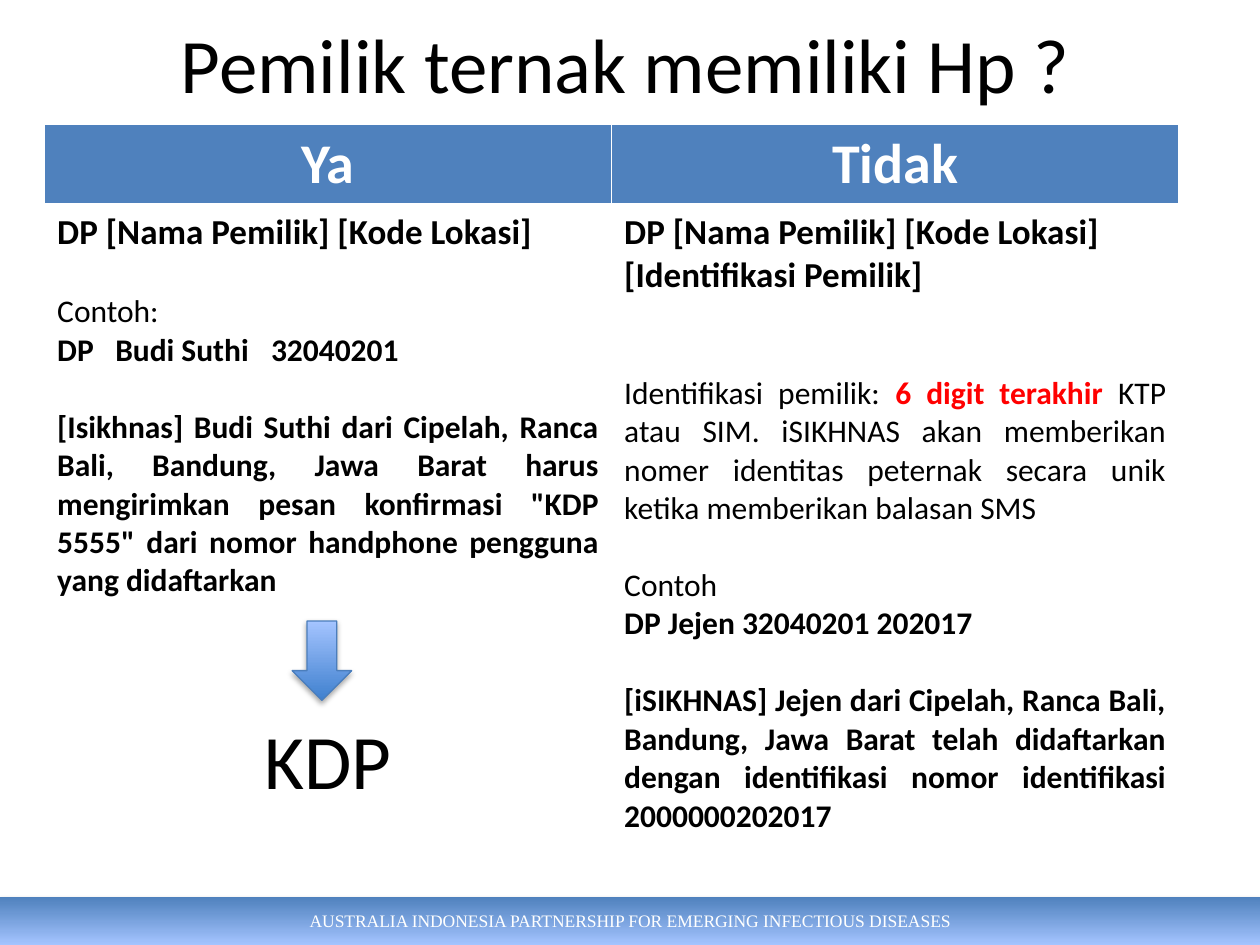
from lxml.etree import SubElement
from pptx import Presentation
from pptx.dml.color import RGBColor
from pptx.enum.shapes import MSO_SHAPE
from pptx.enum.text import MSO_ANCHOR, PP_ALIGN
from pptx.oxml.ns import qn
from pptx.util import Cm, Pt

# Content: a paragraph is (runs, format); a run is (text, format)
TITLE = "Pemilik ternak memiliki Hp ?"
FOOTER = "AUSTRALIA INDONESIA PARTNERSHIP FOR EMERGING INFECTIOUS DISEASES"
HEADERS = ["Ya", "Tidak"]

THEME = {
    "font": "Calibri", "footer_font": "Times New Roman",
    "blue": "4F81BD", "light": "A4C4FF", "arrow": "3F80CE", "outline": "4B7EBC",
    "white": "FFFFFF", "black": "000000", "red": "FF0000",
    "title": 44, "header": 32, "lead": 20, "body": 18, "footer": 10,
}
BOLD = {"bold": True}
LEAD = {"bold": True, "size": THEME["lead"]}
BIG = {"size": THEME["title"]}
ALERT = {"bold": True, "color": THEME["red"]}
LEFT, CENTER, JUSTIFY = PP_ALIGN.LEFT, PP_ALIGN.CENTER, PP_ALIGN.JUSTIFY
LINE = 22  # points in one body line, the unit of the gaps

YES = [
    ([("DP [Nama Pemilik] [Kode Lokasi]", LEAD)], {}),
    ([("Contoh:", {})], {"gap": 1}),
    ([("DP\tBudi Suthi\t32040201", BOLD)], {"tabs": [1.17, 4.31]}),
    ([("[Isikhnas] Budi Suthi dari Cipelah, Ranca Bali, Bandung, Jawa Barat "
       "harus mengirimkan pesan konfirmasi \"KDP 5555\" dari nomor handphone "
       "pengguna yang didaftarkan", BOLD)], {"gap": 1, "align": JUSTIFY}),
    ([("KDP", BIG)], {"gap": 3, "align": CENTER}),
]
NO = [
    ([("DP [Nama Pemilik] [Kode Lokasi] [Identifikasi Pemilik]", LEAD)], {}),
    ([("Identifikasi pemilik: ", {}), ("6 digit terakhir ", ALERT),
      ("KTP atau SIM. iSIKHNAS akan memberikan nomer identitas peternak secara "
       "unik ketika memberikan balasan SMS", {})], {"gap": 2, "align": JUSTIFY}),
    ([("Contoh", {})], {"gap": 1, "align": JUSTIFY}),
    ([("DP Jejen 32040201 202017", BOLD)], {"align": JUSTIFY}),
    ([("[iSIKHNAS] Jejen dari Cipelah, Ranca Bali, Bandung, Jawa Barat telah "
       "didaftarkan dengan identifikasi nomor identifikasi 2000000202017", BOLD)],
     {"gap": 1, "align": JUSTIFY}),
]


def rgb(value):
    return RGBColor.from_string(value)


def write(tf, paragraphs, **base):
    for i, (runs, fmt) in enumerate(paragraphs):
        p = tf.paragraphs[0] if i == 0 else tf.add_paragraph()
        p.alignment = fmt.get("align", LEFT)
        p.space_before = Pt(LINE * fmt.get("gap", 0))
        if "tabs" in fmt:
            tabs = SubElement(p._p.get_or_add_pPr(), qn("a:tabLst"))
            for pos in fmt["tabs"]:
                SubElement(tabs, qn("a:tab"), pos=str(Cm(pos)), algn="l")
        for text, run_fmt in runs:
            r = p.add_run()
            r.text = text
            f = {"name": THEME["font"], "size": THEME["body"], "bold": False,
                 "color": THEME["black"], **base, **run_fmt}
            r.font.color.rgb = rgb(f.pop("color"))
            f["size"] = Pt(f["size"])
            for key, value in f.items():
                setattr(r.font, key, value)


def add_gradient_shape(s, kind, box, colors, angle):
    sp = s.shapes.add_shape(kind, *map(Cm, box))
    sp.fill.gradient()
    sp.fill.gradient_angle = angle
    for stop, color in zip(sp.fill.gradient_stops, colors):
        stop.color.rgb = rgb(color)
    sp.line.fill.background()
    sp.shadow.inherit = False
    effects = sp._element.spPr.find(qn("a:effectLst"))
    shadow = SubElement(effects, qn("a:outerShdw"), blurRad="40000", dist="23000",
                        dir="5400000", rotWithShape="0")
    color = SubElement(shadow, qn("a:srgbClr"), val=THEME["black"])
    SubElement(color, qn("a:alpha"), val="35000")
    return sp


def format_cell(cell, fill, bottom):
    tcPr = cell._tc.get_or_add_tcPr()
    for side, width in zip("LRTB", (1, 1, 1, bottom)):
        ln = SubElement(tcPr, qn(f"a:ln{side}"), w=str(Pt(width)))
        SubElement(SubElement(ln, qn("a:solidFill")), qn("a:srgbClr"), val=THEME["white"])
    cell.fill.solid()
    cell.fill.fore_color.rgb = rgb(fill)


def main():
    prs = Presentation()
    prs.slide_width, prs.slide_height = Cm(25.4), Cm(19.05)
    s = prs.slides.add_slide(prs.slide_layouts[5])

    # Footer band
    band = add_gradient_shape(s, MSO_SHAPE.RECTANGLE, (0, 18.08, 25.4, 0.97),
                              (THEME["blue"], THEME["light"]), 270)
    band.text_frame.vertical_anchor = MSO_ANCHOR.MIDDLE
    write(band.text_frame, [([(FOOTER, {})], {"align": CENTER})], size=THEME["footer"],
          name=THEME["footer_font"], color=THEME["white"])

    # Title
    title = s.shapes.title
    title.left, title.top, title.width, title.height = map(Cm, (1.19, 0, 22.86, 2.51))
    title.text_frame.vertical_anchor = MSO_ANCHOR.MIDDLE
    write(title.text_frame, [([(TITLE, {})], {"align": CENTER})], size=THEME["title"])

    # Table of the two answers
    heights = [1.48, 13.4]
    table = s.shapes.add_table(2, 2, Cm(0.9), Cm(2.5), Cm(22.86), Cm(sum(heights))).table
    for row, height in zip(table.rows, heights):
        row.height = Cm(height)
    for col, (header, body) in enumerate(zip(HEADERS, (YES, NO))):
        head, cell = table.cell(0, col), table.cell(1, col)
        format_cell(head, THEME["blue"], 3)
        format_cell(cell, THEME["white"], 1)
        write(head.text_frame, [([(header, BOLD)], {"align": CENTER})],
              size=THEME["header"], color=THEME["white"])
        write(cell.text_frame, body)

    # Arrow down to the confirmation code
    arrow = add_gradient_shape(s, MSO_SHAPE.DOWN_ARROW, (5.89, 12.52, 1.2, 1.6),
                               (THEME["arrow"], THEME["light"]), 90)
    arrow.line.color.rgb = rgb(THEME["outline"])
    arrow.line.width = Pt(0.75)

    prs.save("out.pptx")


if __name__ == "__main__":
    main()
